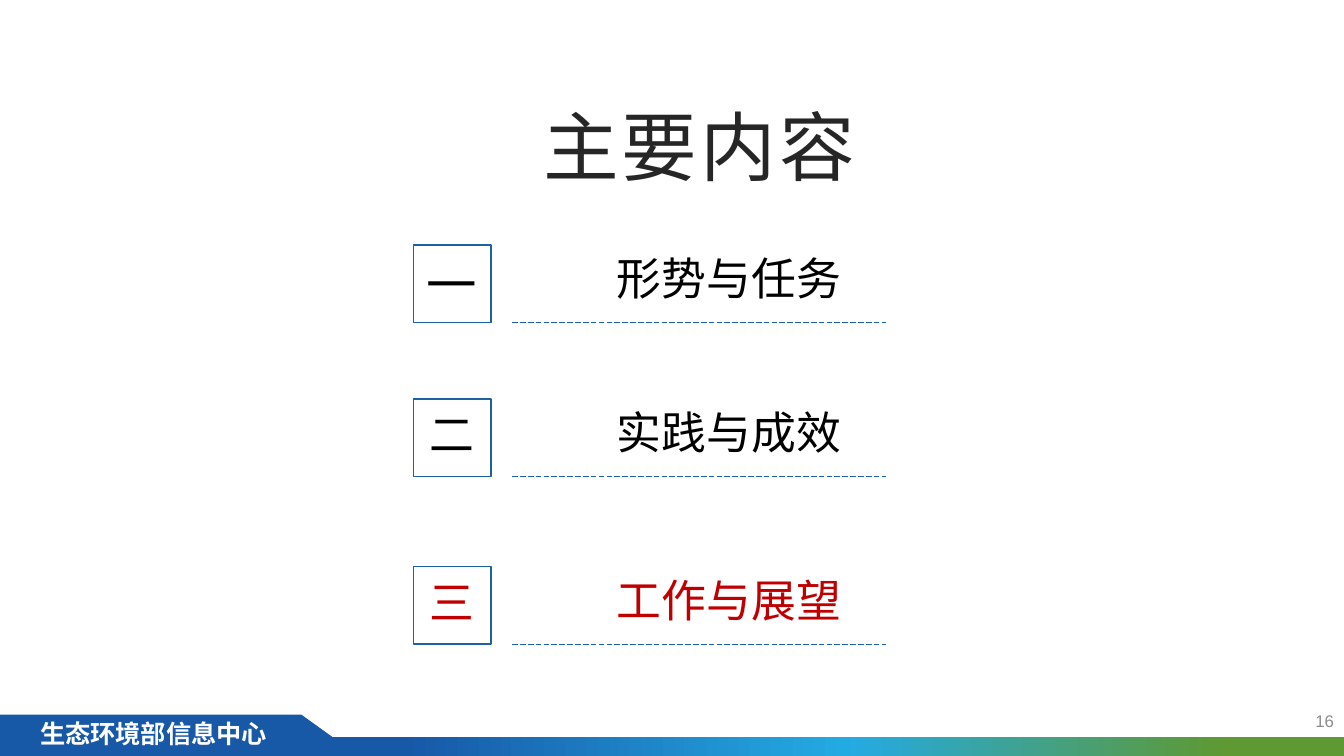
"""Build the agenda slide with its third section highlighted."""
from copy import deepcopy

from lxml.etree import SubElement
from pptx import Presentation
from pptx.dml.color import RGBColor
from pptx.enum.dml import MSO_LINE
from pptx.enum.shapes import MSO_CONNECTOR, MSO_SHAPE
from pptx.enum.text import MSO_ANCHOR, MSO_AUTO_SIZE, PP_ALIGN
from pptx.oxml.ns import qn
from pptx.util import Inches, Pt

COLORS = {
    "navy": "1758A7", "sky": "24AAE3", "green": "5E9933", "outline": "1A62A4",
    "title": "262626", "text": "000000", "current": "C00000",
    "white": "FFFFFF", "number": "8C8C8C",
}
CJK = "Noto Sans CJK SC"


def rgb(name):
    return RGBColor.from_string(COLORS[name])


def write(shape, text, size, color, font=CJK, align=PP_ALIGN.CENTER,
          anchor=MSO_ANCHOR.TOP, bold=False):
    frame = shape.text_frame
    frame.word_wrap = True
    frame.auto_size = MSO_AUTO_SIZE.NONE
    frame.vertical_anchor = anchor
    paragraph = frame.paragraphs[0]
    paragraph.text = text
    paragraph.alignment = align
    paragraph.font.size = Pt(size)
    paragraph.font.bold = bold
    paragraph.font.color.rgb = rgb(color)
    paragraph.font.name = font
    properties = paragraph._p.pPr.find(qn("a:defRPr"))
    SubElement(properties, qn("a:ea")).set("typeface", CJK)
    return properties


prs = Presentation()
prs.slide_width, prs.slide_height = Inches(13.33), Inches(7.5)
slide = prs.slides.add_slide(prs.slide_layouts[5])
shapes = slide.shapes

outline = shapes.build_freeform(0, Inches(7.09))
outline.add_line_segments(
    [(Inches(x), Inches(y)) for x, y in [(2.99, 7.09), (3.56, 7.5), (0, 7.5)]])
footer_tab = outline.convert_to_shape()
footer_tab.fill.solid()
footer_tab.fill.fore_color.rgb = rgb("navy")

footer_band = shapes.add_shape(
    MSO_SHAPE.RECTANGLE, 0, Inches(7.31), prs.slide_width, Inches(0.19))
footer_band.fill.gradient()
footer_band.fill.gradient_angle = 0
first_stop = footer_band.fill.gradient_stops[0]._gs
first_stop.addnext(deepcopy(first_stop))
gradient = [("navy", 0.30), ("sky", 0.63), ("green", 0.91)]
for stop, (color, position) in zip(footer_band.fill.gradient_stops, gradient):
    stop.color.rgb = rgb(color)
    stop.position = position

for footer_part in (footer_tab, footer_band):
    footer_part.line.fill.background()
    footer_part.shadow.inherit = False

organisation = shapes.add_textbox(Inches(0.3), Inches(7.08), Inches(2.64), Inches(0.4))
write(organisation, "生态环境部信息中心", 18, "white", "Arial", PP_ALIGN.LEFT, bold=True)

title = shapes.title
title.left, title.top = Inches(4.47), Inches(0.94)
title.width, title.height = Inches(4.93), Inches(1.01)
write(title, "主要内容", 54, "title").set("spc", "230")

sections = [
    ("一", "形势与任务", 2.43, 36, "text"),
    ("二", "实践与成效", 3.96, 32, "text"),
    ("三", "工作与展望", 5.62, 32, "current"),
]
for numeral, heading, top, numeral_size, color in sections:
    section = shapes.add_group_shape().shapes

    heading_box = section.add_textbox(
        Inches(4.97), Inches(top + 0.01), Inches(4.52), Inches(0.64))
    write(heading_box, heading, 32, color)

    square = section.add_shape(
        MSO_SHAPE.RECTANGLE, Inches(4.1), Inches(top), Inches(0.77), Inches(0.77))
    square.fill.background()
    square.line.color.rgb = rgb("outline")
    square.line.width = Pt(1)
    square.shadow.inherit = False

    numeral_box = section.add_textbox(
        Inches(3.99), Inches(top + 0.03), Inches(0.98), Inches(0.64))
    write(numeral_box, numeral, numeral_size, color)

    underline = section.add_connector(
        MSO_CONNECTOR.STRAIGHT, Inches(5.08), Inches(top + 0.77),
        Inches(8.79), Inches(top + 0.77))
    underline.line.color.rgb = rgb("outline")
    underline.line.width = Pt(0.5)
    underline.line.dash_style = MSO_LINE.LONG_DASH
    SubElement(underline._element.spPr, qn("a:effectLst"))

page_number = shapes.add_textbox(Inches(10.33), Inches(6.95), Inches(3), Inches(0.4))
write(page_number, "16", 12, "number", "Arial", PP_ALIGN.RIGHT, MSO_ANCHOR.MIDDLE)

prs.save("out.pptx")
